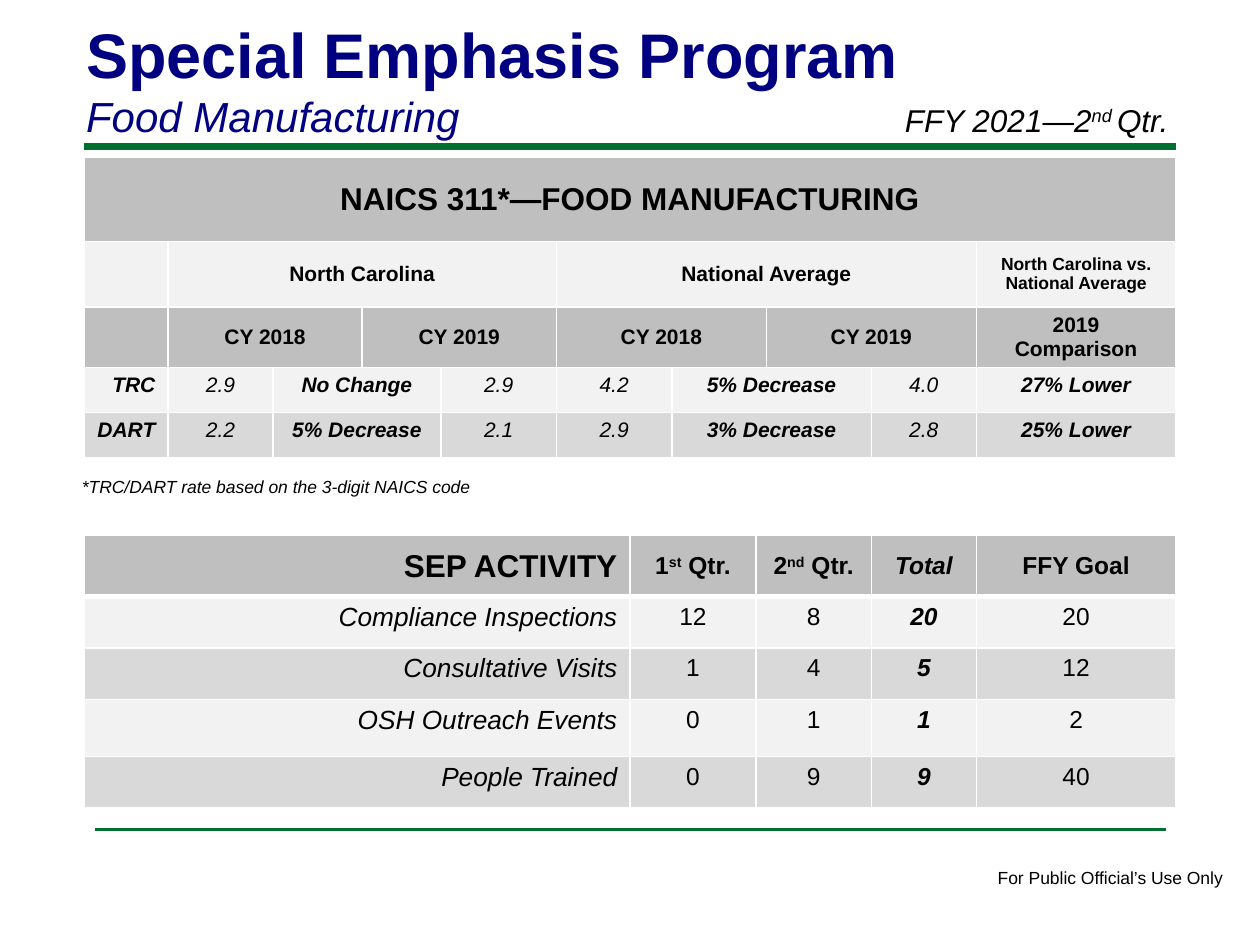
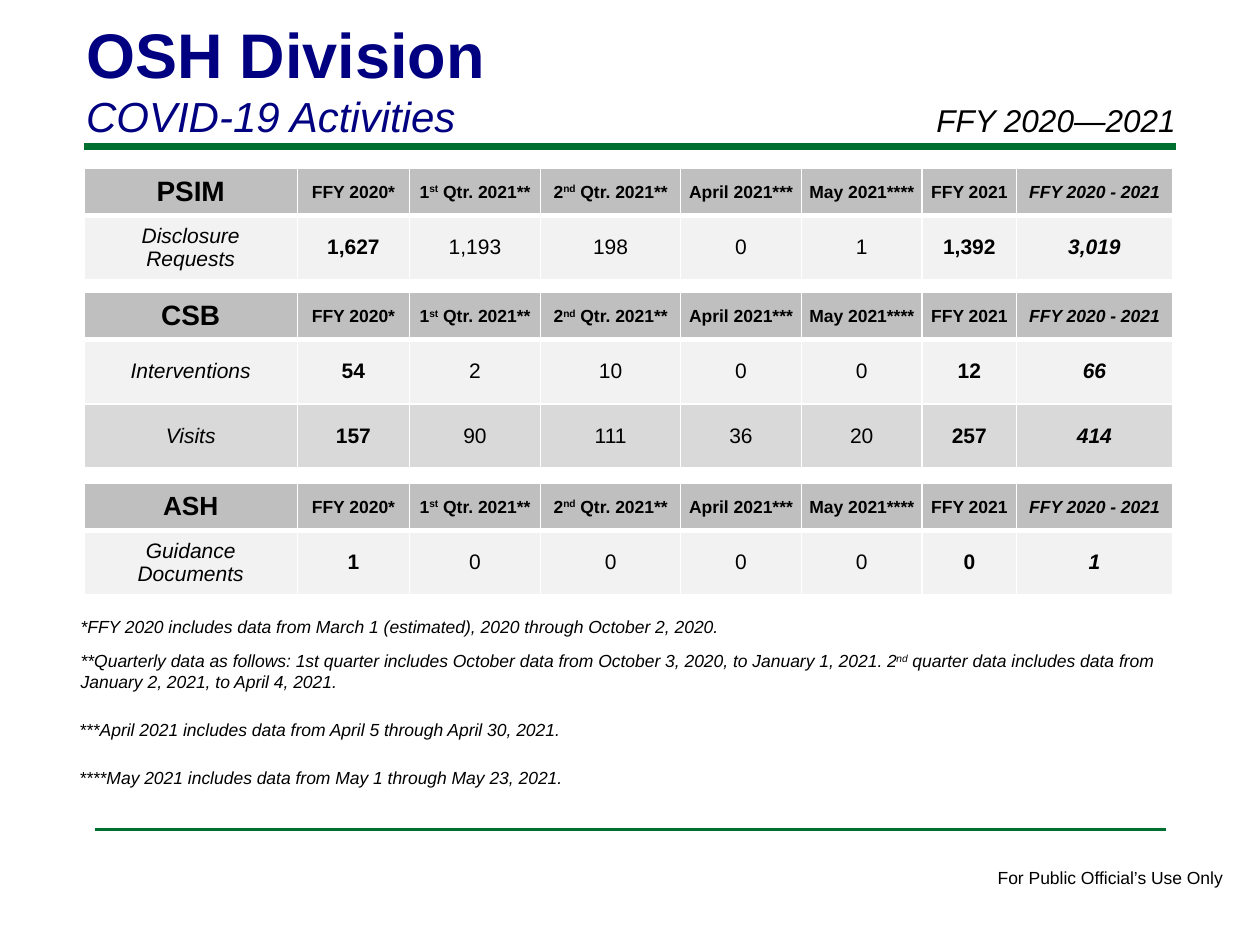
from dataclasses import dataclass
from typing import NamedTuple

from lxml.etree import SubElement
from pptx import Presentation
from pptx.dml.color import RGBColor
from pptx.enum.shapes import MSO_CONNECTOR
from pptx.enum.text import MSO_ANCHOR, MSO_AUTO_SIZE, PP_ALIGN
from pptx.oxml.ns import qn
from pptx.util import Pt

FONT = "Arial"
BLACK = RGBColor(0x00, 0x00, 0x00)
WHITE = RGBColor(0xFF, 0xFF, 0xFF)
NAVY = RGBColor(0x00, 0x00, 0x80)
GREEN = RGBColor(0x00, 0x70, 0x30)
HEADER_GREY = RGBColor(0xBF, 0xBF, 0xBF)
LIGHT_GREY = RGBColor(0xF2, 0xF2, 0xF2)
MID_GREY = RGBColor(0xD9, 0xD9, 0xD9)

TABLE_LEFT = 48
THIN, HEAVY = 1, 3


class Look(NamedTuple):
    size: float
    bold: bool = False
    italic: bool = False
    align: PP_ALIGN = PP_ALIGN.CENTER
    anchor: MSO_ANCHOR = MSO_ANCHOR.MIDDLE
    tight: bool = False


class Entry(NamedTuple):
    text: str
    look: Look
    span: int = 1


@dataclass
class Row:
    height: float
    fill: RGBColor
    entries: list[Entry]


@dataclass
class Grid:
    top: float
    widths: list[float]
    rows: list[Row]
    heavy_header: bool = True


class Note(NamedTuple):
    text: str
    left: float
    top: float
    width: float
    height: float = 19.4
    size: float = 10
    italic: bool = True
    wrap: bool = True


class Rule(NamedTuple):
    left: float
    right: float
    y: float
    weight: float


RULES = [Rule(48, 672, 84, 4), Rule(54, 666, 474, 2)]
FOOTER = Note("For Public Official’s Use Only", 563, 492, 145, italic=False, wrap=False)


def write(paragraph, text: str, *, size: float, bold: bool = False, italic: bool = False,
          color: RGBColor = BLACK, align: PP_ALIGN = PP_ALIGN.LEFT) -> None:
    """Fill a paragraph; text between carets is raised."""
    paragraph.alignment = align
    for index, part in enumerate(text.split("^")):
        if not part:
            continue
        run = paragraph.add_run()
        run.text = part
        font = run.font
        font.name, font.size, font.bold, font.italic = FONT, Pt(size), bold, italic
        font.color.rgb = color
        if index % 2:
            run._r.get_or_add_rPr().set("baseline", "30000")


def add_note(slide, note: Note) -> None:
    box = slide.shapes.add_textbox(Pt(note.left), Pt(note.top), Pt(note.width), Pt(note.height))
    box.text_frame.word_wrap = note.wrap
    write(box.text_frame.paragraphs[0], note.text, size=note.size, italic=note.italic)


def add_rule(slide, rule: Rule) -> None:
    line = slide.shapes.add_connector(
        MSO_CONNECTOR.STRAIGHT, Pt(rule.left), Pt(rule.y), Pt(rule.right), Pt(rule.y))
    line.line.color.rgb = GREEN
    line.line.width = Pt(rule.weight)
    SubElement(line._element.spPr, qn("a:effectLst"))


def set_borders(cell, top: float, bottom: float) -> None:
    properties = cell._tc.get_or_add_tcPr()
    for side, weight in (("L", THIN), ("R", THIN), ("T", top), ("B", bottom)):
        edge = SubElement(properties, qn(f"a:ln{side}"), w=str(Pt(weight)))
        SubElement(SubElement(edge, qn("a:solidFill")), qn("a:srgbClr"), val=str(WHITE))


def fill_cell(cell, entry: Entry, fill: RGBColor, top: float, bottom: float) -> None:
    look = entry.look
    set_borders(cell, top, bottom)
    cell.fill.solid()
    cell.fill.fore_color.rgb = fill
    cell.vertical_anchor = look.anchor
    if look.tight:
        cell.margin_left = cell.margin_right = cell.margin_top = Pt(0.7)
        cell.margin_bottom = Pt(0)
    write(cell.text_frame.paragraphs[0], entry.text, size=look.size, bold=look.bold,
          italic=look.italic, align=look.align)


def add_grid(slide, grid: Grid) -> None:
    table = slide.shapes.add_table(
        len(grid.rows), len(grid.widths), Pt(TABLE_LEFT), Pt(grid.top),
        Pt(sum(grid.widths)), Pt(sum(row.height for row in grid.rows))).table
    table.first_row = table.horz_banding = False
    for column, width in zip(table.columns, grid.widths):
        column.width = Pt(width)
    header_edge = HEAVY if grid.heavy_header else THIN
    for r, row in enumerate(grid.rows):
        table.rows[r].height = Pt(row.height)
        c = 0
        for entry in row.entries:
            cell = table.cell(r, c)
            if entry.span > 1:
                cell.merge(table.cell(r, c + entry.span - 1))
            fill_cell(cell, entry, row.fill, top=header_edge if r == 1 else THIN,
                      bottom=header_edge if r == 0 else THIN)
            c += entry.span


def add_report_slide(deck, title: str, subtitle: str, period: Note,
                     grids: list[Grid], notes: list[Note]) -> None:
    slide = deck.slides.add_slide(deck.slide_layouts[5])
    for rule in RULES:
        add_rule(slide, rule)
    heading = slide.shapes.title
    heading.left, heading.top, heading.width, heading.height = Pt(42), Pt(4.3), Pt(594), Pt(80)
    frame = heading.text_frame
    frame.auto_size = MSO_AUTO_SIZE.NONE
    frame.word_wrap = True
    frame.vertical_anchor = MSO_ANCHOR.BOTTOM
    write(frame.paragraphs[0], title, size=36, bold=True, color=NAVY)
    write(frame.add_paragraph(), subtitle, size=24, italic=True, color=NAVY)
    for grid in grids:
        add_grid(slide, grid)
    for note in (period, *notes, FOOTER):
        add_note(slide, note)


def period_note(text: str, left: float) -> Note:
    return Note(text, left, 54, 180, 29, size=18)


def rates_grid() -> Grid:
    """Injury rates of the state against the nation."""
    head = Look(12, bold=True)
    label = Look(12, True, True, PP_ALIGN.RIGHT, MSO_ANCHOR.TOP)
    rate = Look(12, italic=True, anchor=MSO_ANCHOR.TOP)
    change = rate._replace(bold=True)

    def rate_row(fill: RGBColor, name: str, *values: str) -> Row:
        looks = [rate, change, rate] * 2 + [change]
        spans = [1, 2, 1] * 2 + [1]
        return Row(25.7, fill, [Entry(name, label), *map(Entry, values, looks, spans)])

    years = [Entry(year, head, 2) for year in ("CY 2018", "CY 2019")]
    return Grid(90, [48, 60, 51, 45, 66, 66, 54, 60, 60, 114], [
        Row(48, HEADER_GREY, [Entry("NAICS 311*—FOOD MANUFACTURING", Look(18, bold=True), 10)]),
        Row(37.4, LIGHT_GREY, [
            Entry("", head), Entry("North Carolina", head, 4), Entry("National Average", head, 4),
            Entry("North Carolina vs. National Average", Look(10, bold=True))]),
        Row(34.6, HEADER_GREY, [Entry("", head), *years * 2, Entry("2019 Comparison", head)]),
        rate_row(LIGHT_GREY, "TRC", "2.9", "No Change", "2.9", "4.2", "5% Decrease", "4.0",
                 "27% Lower"),
        rate_row(MID_GREY, "DART", "2.2", "5% Decrease", "2.1", "2.9", "3% Decrease", "2.8",
                 "25% Lower"),
    ], heavy_header=False)


def sep_activity_grid() -> Grid:
    head = Look(14, bold=True)
    label = Look(15, False, True, PP_ALIGN.RIGHT, MSO_ANCHOR.TOP)
    count = Look(14, anchor=MSO_ANCHOR.TOP)
    total = count._replace(bold=True, italic=True)
    looks = [label, count, count, total, count]
    activities = [
        (29.3, ("Compliance Inspections", "12", "8", "20", "20")),
        (29.5, ("Consultative Visits", "1", "4", "5", "12")),
        (32.6, ("OSH Outreach Events", "0", "1", "1", "2")),
        (29.3, ("People Trained", "0", "9", "9", "40")),
    ]
    header = [Entry("SEP ACTIVITY", Look(18, bold=True, align=PP_ALIGN.RIGHT)),
              Entry("1^st^ Qtr.", head), Entry("2^nd^ Qtr.", head),
              Entry("Total", head._replace(italic=True)), Entry("FFY Goal", head)]
    rows = [Row(height, (LIGHT_GREY, MID_GREY)[i % 2], list(map(Entry, values, looks)))
            for i, (height, values) in enumerate(activities)]
    return Grid(306, [312, 72, 66, 60, 114], [Row(35, HEADER_GREY, header), *rows])


def covid_grid(top: float, bureau: str, *activities: tuple[str, ...], name_size: float = 16) -> Grid:
    """One bureau's counts by period, under the shared period headings."""
    period = Look(10, bold=True, tight=True)
    count, subtotal = Look(12), Look(12, bold=True)
    looks = [Look(12, italic=True), subtotal, *[count] * 4, subtotal, Look(12, True, True)]
    periods = ["FFY 2020*", "1^st^ Qtr. 2021**", "2^nd^ Qtr. 2021**", "April 2021***",
               "May 2021****", "FFY 2021"]
    header = [Entry(bureau, Look(name_size, bold=True)),
              *[Entry(name, period) for name in periods],
              Entry("FFY 2020 - 2021", period._replace(italic=True))]
    rows = [Row(36.8, (LIGHT_GREY, MID_GREY)[i % 2], list(map(Entry, values, looks)))
            for i, values in enumerate(activities)]
    return Grid(top, [122, 64, 75, 80, 69, 69, 54, 89], [Row(27, HEADER_GREY, header), *rows])


def main() -> None:
    deck = Presentation()
    deck.slide_width, deck.slide_height = Pt(720), Pt(540)
    add_report_slide(
        deck, "Special Emphasis Program", "Food Manufacturing",
        period_note("FFY 2021—2^nd ^Qtr.", 510),
        [rates_grid(), sep_activity_grid()],
        [Note("*TRC/DART rate based on the 3-digit NAICS code", 39.7, 268.5, 243.5, wrap=False)])
    add_report_slide(
        deck, "OSH Division", "COVID-19 Activities",
        period_note("FFY 2020—2021", 528),
        [covid_grid(96, "PSIM",
                    ("Disclosure Requests", "1,627", "1,193", "198", "0", "1", "1,392", "3,019")),
         covid_grid(167, "CSB",
                    ("Interventions", "54", "2", "10", "0", "0", "12", "66"),
                    ("Visits", "157", "90", "111", "36", "20", "257", "414")),
         covid_grid(276, "ASH",
                    ("Guidance Documents", "1", "0", "0", "0", "0", "0", "1"), name_size=15)],
        [Note("*FFY 2020 includes data from March 1 (estimated), 2020 through October 2, 2020.",
              39, 348.5, 629),
         Note("**Quarterly data as follows: 1st quarter includes October data from October 3, 2020, "
              "to January 1, 2021. 2^nd^ quarter data includes data from January 2, 2021, "
              "to April 4, 2021.", 39, 368, 630, 31.5),
         Note("***April 2021 includes data from April 5 through April 30, 2021.", 38.3, 407.5, 629),
         Note("****May 2021 includes data from May 1 through May 23, 2021.", 38.3, 434.7, 629)])
    deck.save("out.pptx")


if __name__ == "__main__":
    main()
